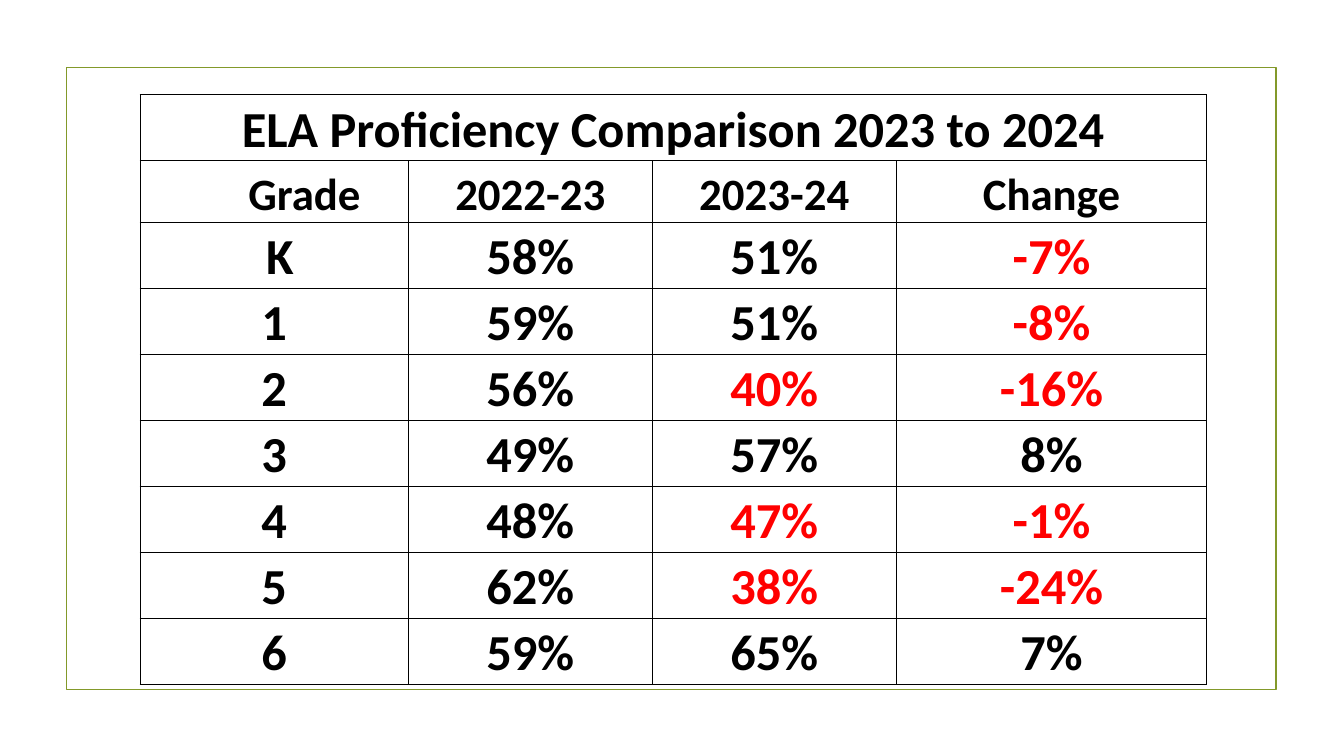
"""Build the ELA proficiency comparison slide."""
from lxml import etree
from pptx import Presentation
from pptx import util as u
from pptx.dml.color import RGBColor
from pptx.enum import shapes, text
from pptx.oxml.ns import qn

TITLE = "ELA Proficiency Comparison 2023 to 2024"
HEADINGS = ("Grade", "2022-23", "2023-24", "Change")
RESULTS = [
    ("K", "58%", "51%", "-7%"),
    ("1", "59%", "51%", "-8%"),
    ("2", "56%", "40%", "-16%"),
    ("3", "49%", "57%", "8%"),
    ("4", "48%", "47%", "-1%"),
    ("5", "62%", "38%", "-24%"),
    ("6", "59%", "65%", "7%"),
]
RED_BELOW = {2: 50, 3: 0}
INDENTS = {"Grade": 0.6, "K": 0.11}
COLUMN_WIDTHS = (2.66, 2.42, 2.42, 3.08)
ROW_HEIGHT, HEADING_HEIGHT = 0.64, 0.61
BLACK, RED, OLIVE = "000000", "FF0000", "83992A"


def color(hex_code):
    return RGBColor.from_string(hex_code)


def add_borders(cell):
    properties = cell._tc.get_or_add_tcPr()
    for position, side in enumerate(("lnL", "lnR", "lnT", "lnB")):
        border = etree.Element(qn(f"a:{side}"), w=str(u.Pt(1)))
        fill = etree.SubElement(border, qn("a:solidFill"))
        etree.SubElement(fill, qn("a:srgbClr"), val=BLACK)
        properties.insert(position, border)


def write_cell(cell, words, size, ink):
    cell.vertical_anchor = text.MSO_ANCHOR.BOTTOM
    cell.margin_left = u.Inches(0.07 + INDENTS.get(words, 0))
    cell.margin_right = u.Inches(0.07)
    cell.margin_top = cell.margin_bottom = 0
    paragraph = cell.text_frame.paragraphs[0]
    paragraph.alignment = text.PP_ALIGN.CENTER
    paragraph.line_spacing = 1.07
    run = paragraph.add_run()
    run.text = words
    run.font.name = "Calibri"
    run.font.size = u.Pt(size)
    run.font.bold = True
    run.font.color.rgb = color(ink)


def result_ink(column, words):
    is_low = column in RED_BELOW and int(words.rstrip("%")) < RED_BELOW[column]
    return RED if is_low else BLACK


def main():
    deck = Presentation()
    deck.slide_width, deck.slide_height = u.Inches(13.33), u.Inches(7.5)
    slide = deck.slides.add_slide(deck.slide_layouts[6])

    frame = slide.shapes.add_shape(
        shapes.MSO_SHAPE.RECTANGLE,
        u.Inches(0.66), u.Inches(0.67), u.Inches(12), u.Inches(6.17))
    frame.shadow.inherit = False
    frame.fill.background()
    frame.line.color.rgb = color(OLIVE)
    frame.line.width = u.Pt(1.25)

    heights = [ROW_HEIGHT, HEADING_HEIGHT] + [ROW_HEIGHT] * len(RESULTS)
    scores = slide.shapes.add_table(
        len(heights), len(COLUMN_WIDTHS), u.Inches(1.39), u.Inches(0.94),
        u.Inches(sum(COLUMN_WIDTHS)), u.Inches(sum(heights))).table
    scores.first_row = scores.horz_banding = False
    for column, width in zip(scores.columns, COLUMN_WIDTHS):
        column.width = u.Inches(width)
    for row, height in zip(scores.rows, heights):
        row.height = u.Inches(height)
        for cell in row.cells:
            cell.fill.background()
            add_borders(cell)

    scores.cell(0, 0).merge(scores.cell(0, len(HEADINGS) - 1))
    write_cell(scores.cell(0, 0), TITLE, 36, BLACK)
    for column, heading in enumerate(HEADINGS):
        write_cell(scores.cell(1, column), heading, 32, BLACK)
    for row, result in enumerate(RESULTS, start=2):
        for column, words in enumerate(result):
            write_cell(scores.cell(row, column), words, 36, result_ink(column, words))

    deck.save("out.pptx")


if __name__ == "__main__":
    main()
